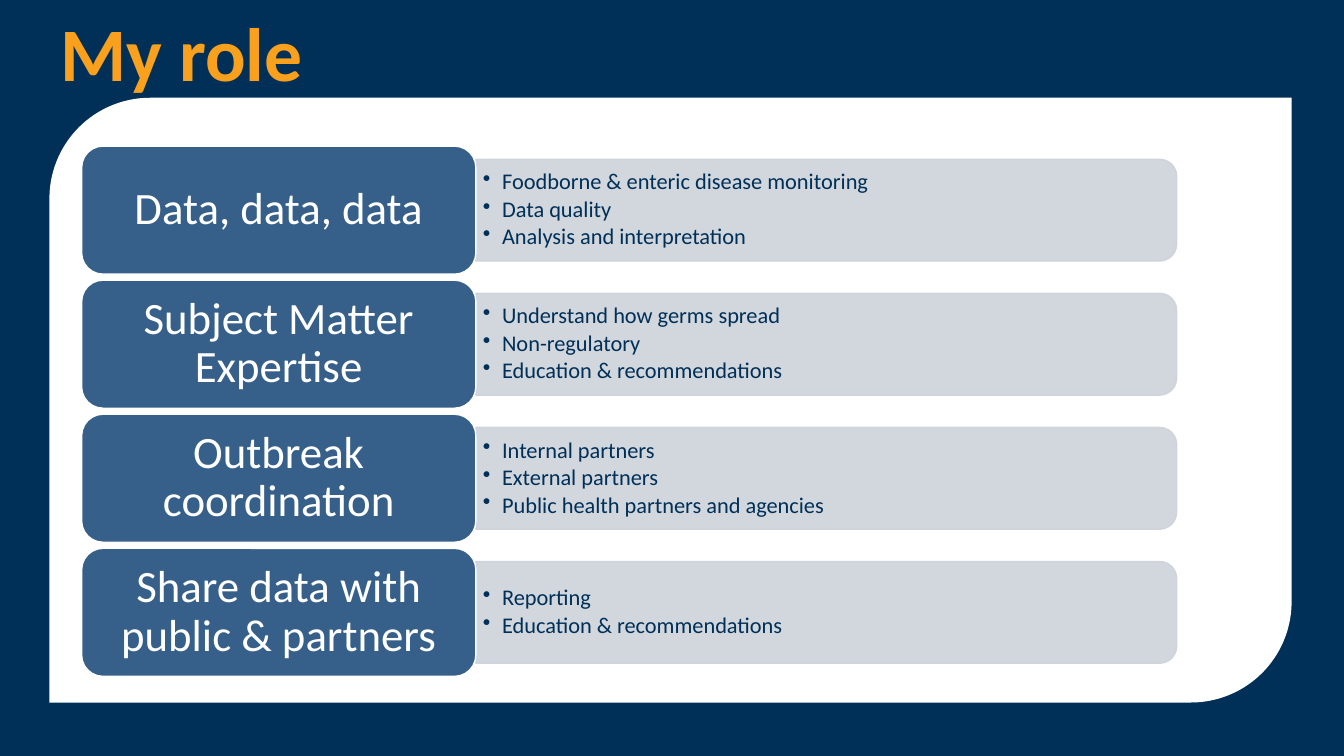
from lxml.etree import SubElement
from pptx import Presentation
from pptx.dml.color import RGBColor
from pptx.enum.shapes import MSO_SHAPE as Shape
from pptx.enum.text import MSO_ANCHOR as Anchor, PP_ALIGN as Align
from pptx.oxml.ns import qn
from pptx.util import Inches, Pt

TITLE = "My role"
ROLES = [
    ("Data, data, data",
     ["Foodborne & enteric disease monitoring", "Data quality",
      "Analysis and interpretation"]),
    ("Subject Matter Expertise",
     ["Understand how germs spread", "Non-regulatory",
      "Education & recommendations"]),
    ("Outbreak coordination",
     ["Internal partners", "External partners",
      "Public health partners and agencies"]),
    ("Share data with public & partners",
     ["Reporting", "Education & recommendations"]),
]

THEME = {
    "font": "Calibri",
    "navy": RGBColor.from_string("003057"),
    "orange": RGBColor.from_string("F9A01D"),
    "blue": RGBColor.from_string("36608A"),
    "grey": RGBColor.from_string("CED2DA"),
    "white": RGBColor.from_string("FFFFFF"),
    "title": Pt(54),
    "label": Pt(32),
    "detail": Pt(16),
}

LEFT, TOP, PITCH = 0.81, 1.45, 1.33
LABEL_WIDTH, LABEL_HEIGHT = 3.91, 1.27
BAR_LENGTH, BAR_HEIGHT = 6.95, 1.01
DETAIL_WIDTH, DETAIL_HEIGHT = 6.9, 0.91


def apply(target, values):
    """Set each named attribute on the target."""
    for name, value in values.items():
        setattr(target, name, value)


def add_panel(slide, kind, box, fill, line=None, opacity=None):
    """Add a filled shape with an optional outline and opacity in percent."""
    shape = slide.shapes.add_shape(kind, *map(Inches, box))
    shape.shadow.inherit = False
    shape.fill.solid()
    shape.fill.fore_color.rgb = fill
    if line is None:
        shape.line.fill.background()
    else:
        shape.line.color.rgb = line
        shape.line.width = Pt(1)
    if opacity is not None:
        for color in shape._element.spPr.iter(qn("a:srgbClr")):
            SubElement(color, qn("a:alpha"), val=str(opacity * 1000))
    return shape


def set_frame(frame, side, end, wrap=True):
    """Centre the text vertically and set its insets."""
    apply(frame, {"word_wrap": wrap, "vertical_anchor": Anchor.MIDDLE,
                  "margin_left": Inches(side), "margin_right": Inches(side),
                  "margin_top": Inches(end), "margin_bottom": Inches(end)})


def write(paragraph, text, size, color, bold=False, **layout):
    """Write one formatted line of text."""
    apply(paragraph, {"line_spacing": 0.9, **layout})
    run = paragraph.add_run()
    run.text = text
    apply(run.font, {"name": THEME["font"], "size": size, "bold": bold})
    run.font.color.rgb = color


def add_bullet(paragraph):
    """Give the paragraph a hanging round bullet."""
    properties = paragraph._p.get_or_add_pPr()
    properties.set("marL", str(Inches(0.19)))
    properties.set("indent", str(-Inches(0.19)))
    SubElement(properties, qn("a:buChar"), char="•")


def add_role(slide, top, label, details):
    """Add one label with its bar of bulleted details."""
    bar_left = LEFT + LABEL_WIDTH
    middle = top + LABEL_HEIGHT / 2
    bar = add_panel(slide, Shape.ROUND_2_SAME_RECTANGLE,
                    (bar_left + (BAR_LENGTH - BAR_HEIGHT) / 2,
                     middle - BAR_LENGTH / 2, BAR_HEIGHT, BAR_LENGTH),
                    THEME["grey"], THEME["grey"], 90)
    bar.rotation = 90

    detail_box = (bar_left, middle - DETAIL_HEIGHT / 2, DETAIL_WIDTH, DETAIL_HEIGHT)
    frame = slide.shapes.add_textbox(*map(Inches, detail_box)).text_frame
    set_frame(frame, 0.07, 0.03)
    for index, detail in enumerate(details):
        paragraph = frame.add_paragraph() if index else frame.paragraphs[0]
        add_bullet(paragraph)
        write(paragraph, detail, THEME["detail"], THEME["navy"],
              level=1, space_after=Pt(2.4))

    panel = add_panel(slide, Shape.ROUNDED_RECTANGLE,
                      (LEFT, top, LABEL_WIDTH, LABEL_HEIGHT),
                      THEME["blue"], THEME["white"])
    set_frame(panel.text_frame, 0.19, 0.13)
    write(panel.text_frame.paragraphs[0], label, THEME["label"],
          THEME["white"], alignment=Align.CENTER)


def main():
    """Build and save the slide."""
    presentation = Presentation()
    apply(presentation, {"slide_width": Inches(13.33), "slide_height": Inches(7.5)})
    slide = presentation.slides.add_slide(presentation.slide_layouts.get_by_name("Title Only"))
    slide.background.fill.solid()
    slide.background.fill.fore_color.rgb = THEME["navy"]

    add_panel(slide, Shape.ROUND_2_DIAG_RECTANGLE, (0.49, 0.97, 12.32, 6), THEME["white"])
    title = slide.shapes.title
    apply(title, {"left": Inches(0.5), "top": Inches(0.08),
                  "width": Inches(12.33), "height": Inches(0.97)})
    set_frame(title.text_frame, 0.1, 0.05)
    write(title.text_frame.paragraphs[0], TITLE, THEME["title"],
          THEME["orange"], bold=True, alignment=Align.LEFT)

    for index, (label, details) in enumerate(ROLES):
        add_role(slide, TOP + index * PITCH, label, details)
    presentation.save("out.pptx")


if __name__ == "__main__":
    main()
